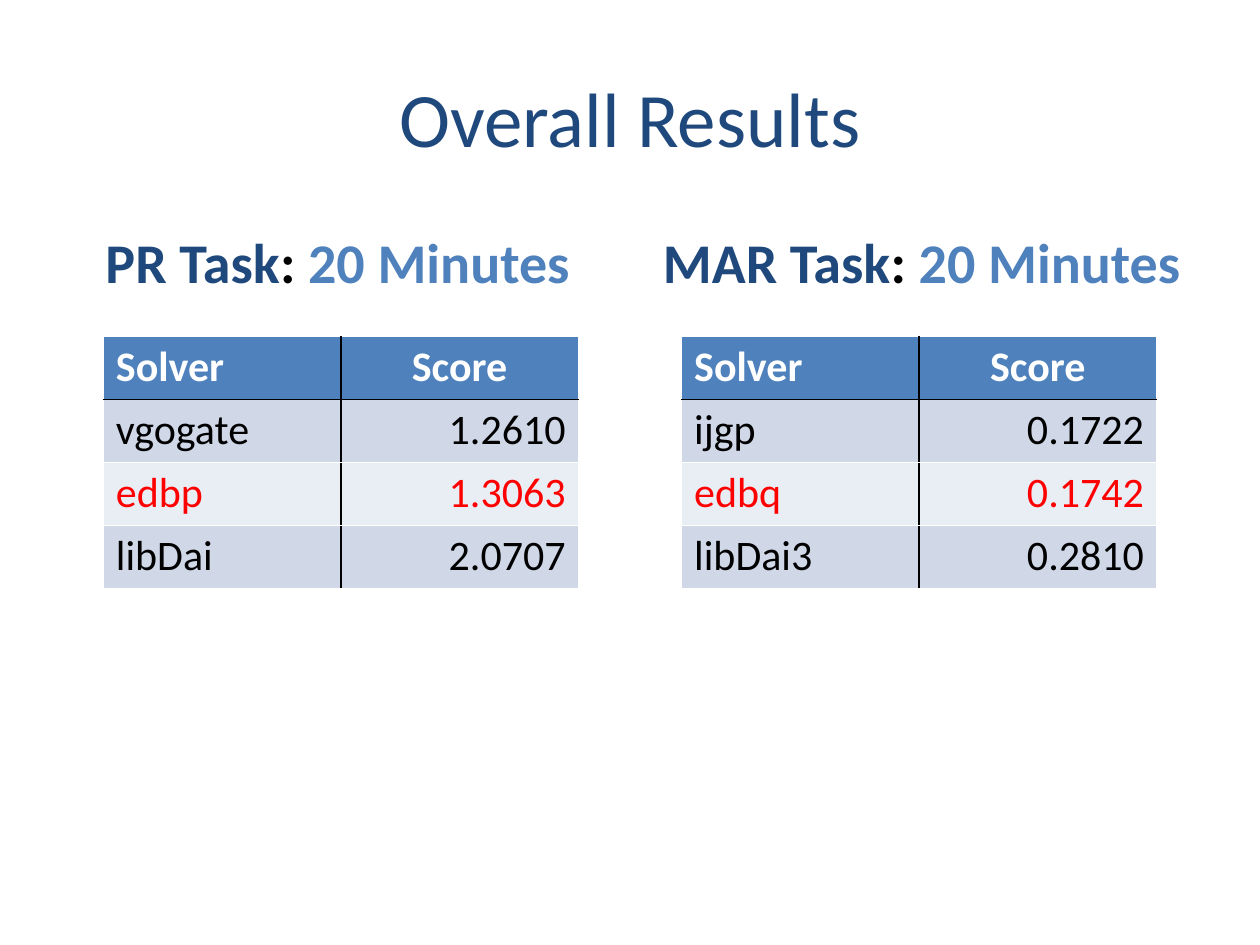
from dataclasses import dataclass

from lxml import etree
from pptx import Presentation
from pptx import util as u
from pptx.dml.color import RGBColor
from pptx.enum import text
from pptx.oxml import ns

WIDTH, HEIGHT = 10, 7.5
COLORS = {
    "navy": "1F497D",
    "blue": "4F81BD",
    "black": "000000",
    "white": "FFFFFF",
    "red": "FF0000",
    "band_dark": "D0D8E8",
    "band_light": "E9EDF4",
}
FONT = "Calibri"
TABLE_TOP = 2.67
COLUMN_WIDTH = 1.885
ROW_HEIGHT = 0.5
CELL_MARGIN = 0.04
HEADING_TOP, HEADING_HEIGHT = 1.75, 0.64
HEADER = ("Solver", "Score")
HIGHLIGHTED_ROW = 2


@dataclass(frozen=True)
class Task:
    name: str
    heading_left: float
    heading_width: float
    table_left: float
    scores: tuple[tuple[str, str], ...]


TASKS = (
    Task("PR Task", 0.72, 3.92, 0.82,
         (("vgogate", "1.2610"), ("edbp", "1.3063"), ("libDai", "2.0707"))),
    Task("MAR Task", 5.14, 4.35, 5.41,
         (("ijgp", "0.1722"), ("edbq", "0.1742"), ("libDai3", "0.2810"))),
)


def write(frame, runs, *, size: float, bold: bool = False,
          align=text.PP_ALIGN.LEFT) -> None:
    """Fill a text frame's paragraph with (wording, colour name) runs."""
    paragraph = frame.paragraphs[0]
    paragraph.alignment = align
    for wording, color in runs:
        run = paragraph.add_run()
        run.text = wording
        run.font.name = FONT
        run.font.size = u.Pt(size)
        run.font.bold = bold
        run.font.color.rgb = RGBColor.from_string(COLORS[color])


def add_text(slide, left: float, top: float, width: float, height: float,
             runs, *, wrap: bool = True, **style) -> None:
    box = slide.shapes.add_textbox(*map(u.Inches, (left, top, width, height)))
    frame = box.text_frame
    frame.word_wrap = wrap
    frame.vertical_anchor = text.MSO_ANCHOR.MIDDLE
    write(frame, runs, align=text.PP_ALIGN.CENTER, **style)


def set_borders(cell, **sides: str) -> None:
    """Draw 1 pt borders; sides map L, R, T and B, in that order, to colours."""
    properties = cell._tc.get_or_add_tcPr()
    for side, color in sides.items():
        line = etree.SubElement(properties, ns.qn(f"a:ln{side}"), w=str(u.Pt(1)))
        fill = etree.SubElement(line, ns.qn("a:solidFill"))
        etree.SubElement(fill, ns.qn("a:srgbClr"), val=COLORS[color])


def format_cell(cell, row: int, column: int, wording: str) -> None:
    is_header = row == 0
    set_borders(
        cell,
        L="black" if column == 1 else "white",
        R="black" if column == 0 else "white",
        T="black" if row == 1 else "white",
        B="black" if is_header else "white",
    )
    if is_header:
        fill, color = "blue", "white"
    else:
        fill = "band_dark" if row % 2 else "band_light"
        color = "red" if row == HIGHLIGHTED_ROW else "black"
    cell.fill.solid()
    cell.fill.fore_color.rgb = RGBColor.from_string(COLORS[fill])
    cell.margin_top = cell.margin_bottom = u.Inches(CELL_MARGIN)

    align = text.PP_ALIGN.LEFT
    if column == 1:
        align = text.PP_ALIGN.CENTER if is_header else text.PP_ALIGN.RIGHT
    write(cell.text_frame, [(wording, color)], size=24, bold=is_header, align=align)


def add_score_table(slide, task: Task) -> None:
    rows = (HEADER, *task.scores)
    table = slide.shapes.add_table(
        len(rows), len(HEADER),
        u.Inches(task.table_left), u.Inches(TABLE_TOP),
        u.Inches(COLUMN_WIDTH * len(HEADER)), u.Inches(ROW_HEIGHT * len(rows)),
    ).table
    table.horz_banding = False
    for row, values in enumerate(rows):
        for column, wording in enumerate(values):
            format_cell(table.cell(row, column), row, column, wording)


def main() -> None:
    presentation = Presentation()
    presentation.slide_width = u.Inches(WIDTH)
    presentation.slide_height = u.Inches(HEIGHT)
    slide = presentation.slides.add_slide(presentation.slide_layouts[6])

    add_text(slide, WIDTH * 0.05, HEIGHT * 0.04, WIDTH * 0.9, 1.25,
             [("Overall Results", "navy")], size=44)
    for task in TASKS:
        add_score_table(slide, task)
        add_text(slide, task.heading_left, HEADING_TOP,
                 task.heading_width, HEADING_HEIGHT,
                 [(task.name, "navy"), (": ", "black"), ("20 Minutes", "blue")],
                 size=32, bold=True, wrap=False)
    presentation.save("out.pptx")


if __name__ == "__main__":
    main()
